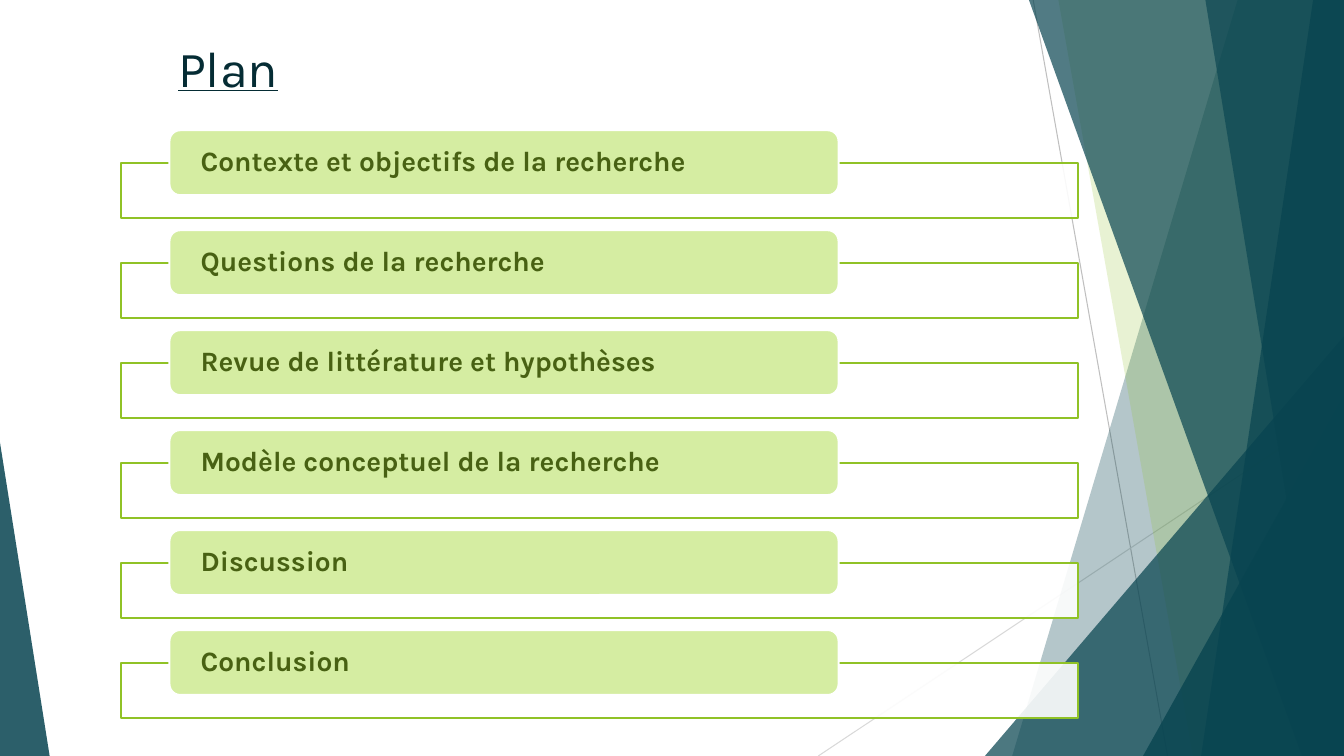
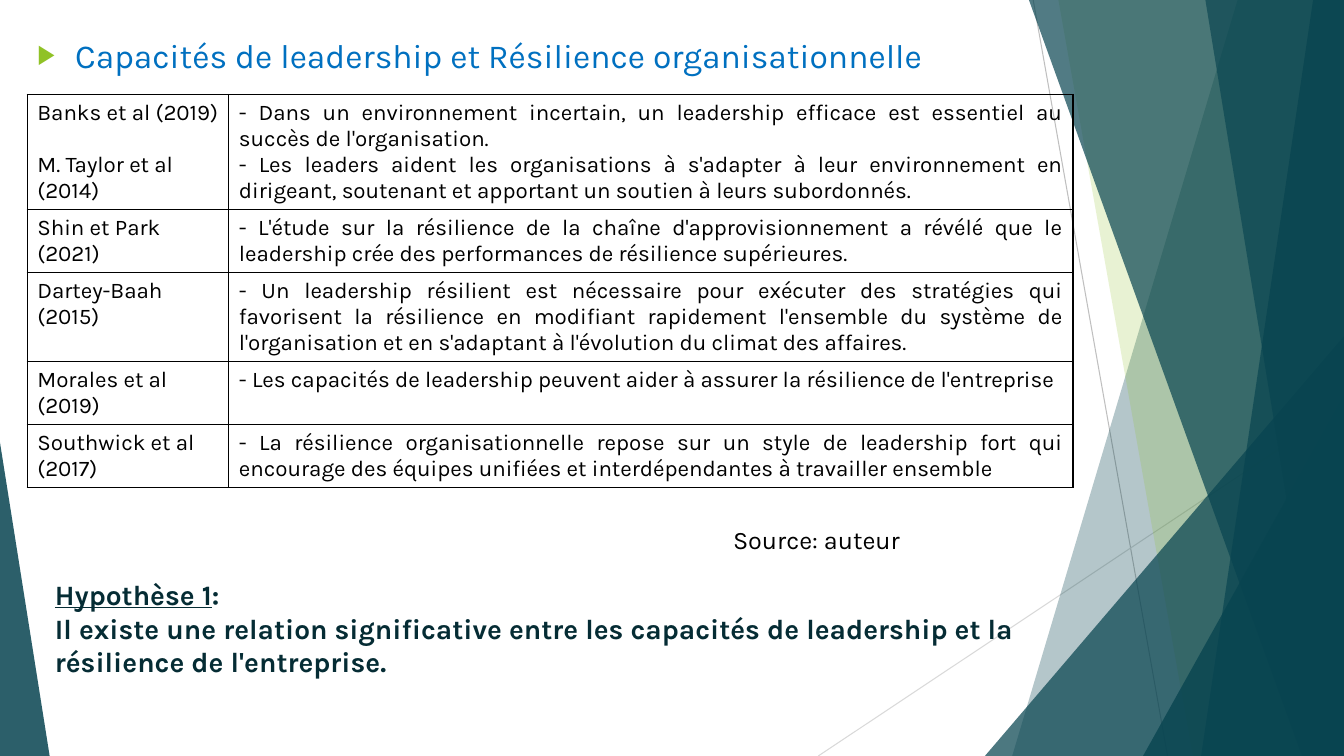
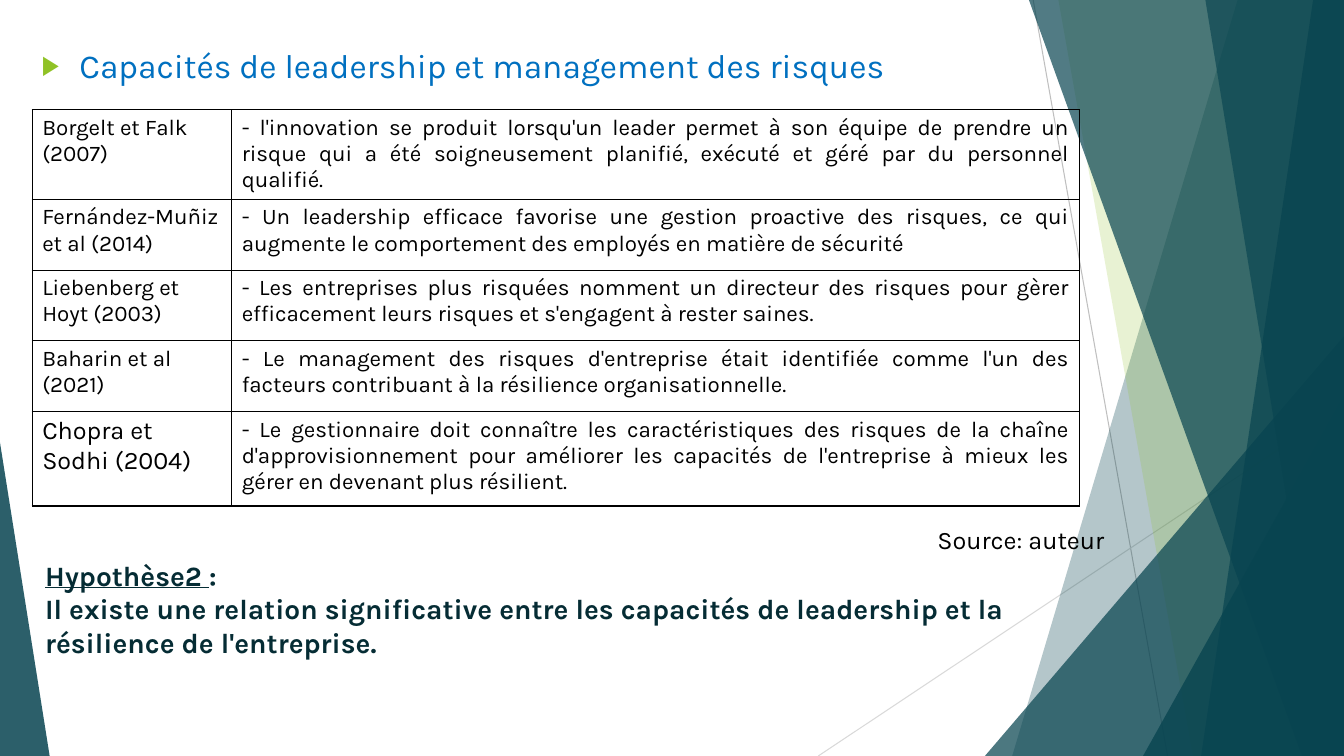
from lxml import etree
from pptx import Presentation
from pptx.dml.color import RGBColor
from pptx.enum import shapes, text
from pptx.oxml import ns
from pptx.util import Pt

FONT = "Karla"
WHITE = RGBColor(0xFF, 0xFF, 0xFF)
BLACK = RGBColor(0, 0, 0)
TEAL = RGBColor(0x08, 0x44, 0x50)
GREEN = RGBColor(0x90, 0xC2, 0x26)
PALE_GREEN = RGBColor(0xD5, 0xED, 0xA2)
DARK_GREEN = RGBColor(0x48, 0x61, 0x13)
NAVY = RGBColor(0x05, 0x2C, 0x34)
BLUE = RGBColor(0x00, 0x70, 0xC0)
GREY = RGBColor(0xBF, 0xBF, 0xBF)
LIGHT_GREY = RGBColor(0xD9, 0xD9, 0xD9)

WIDTH, HEIGHT = 960, 540

RULES = [(738, 0, 834, HEIGHT, GREY), (WIDTH, 290, 584.5, HEIGHT, LIGHT_GREY)]
BANDS = [
    ("panel", (884, 723), TEAL, 30),
    ("panel", (756, 852), GREEN, 20),
    ("triangle", (703.5, 240, 256.5, 1), TEAL, 72),
    ("panel", (735, 929.5), TEAL, 70),
    ("panel", (938, 858), TEAL, 70),
    ("panel", (861, 949), TEAL, 65),
    ("triangle", (816.5, 283, 143.5, 1), TEAL, 80),
    ("triangle", (0, 316, 35.5, 0), TEAL, 85),
]

PLAN = [
    "Contexte et objectifs de la recherche",
    "Questions de la recherche",
    "Revue de littérature et hypothèses",
    "Modèle conceptuel de la recherche",
    "Discussion",
    "Conclusion",
]
PLAN_TOP, PLAN_PITCH = 93, 71.4

HYPOTHESIS = ("Il existe une relation significative entre les capacités de "
              "leadership et la résilience de l'entreprise.")

REVIEWS = [
    {
        "heading": "Capacités de leadership et Résilience organisationnelle",
        "heading_box": (19.5, 21, 798, 42),
        "table_at": (19.5, 67.5),
        "columns": (144, 603),
        "rows": [
            (82, 16, ["Banks et al (2019)", "M. Taylor et al (2014)"],
             ["- Dans un environnement incertain, un leadership efficace est essentiel au succès de l'organisation.",
              "- Les leaders aident les organisations à s'adapter à leur environnement en dirigeant, soutenant et apportant un soutien à leurs subordonnés."]),
            (45, 16, ["Shin et Park (2021)"],
             ["- L'étude sur la résilience de la chaîne d'approvisionnement a révélé que le leadership crée des performances de résilience supérieures."]),
            (63.5, 16, ["Dartey-Baah (2015)"],
             ["- Un leadership résilient est nécessaire pour exécuter des stratégies qui favorisent la résilience en modifiant rapidement l'ensemble du système de l'organisation et en s'adaptant à l'évolution du climat des affaires."]),
            (45, 16, ["Morales et al (2019)"],
             ["- Les capacités de leadership peuvent aider à assurer la résilience de l'entreprise"]),
            (45, 16, ["Southwick et al (2017)"],
             ["- La résilience organisationnelle repose sur un style de leadership fort qui encourage des équipes unifiées et interdépendantes à travailler ensemble"]),
        ],
        "source_left": 516.5,
        "label": "Hypothèse 1",
        "title_box": (32, 409, 775.5, 79),
    },
    {
        "heading": "Capacités de leadership et management des risques",
        "heading_box": (22.5, 28.5, 865, 42),
        "table_at": (23, 78.5),
        "columns": (142.5, 605.5),
        "rows": [
            (64, 16, ["Borgelt et Falk (2007)"],
             ["- l'innovation se produit lorsqu'un leader permet à son équipe de prendre un risque qui a été soigneusement planifié, exécuté et géré par du personnel qualifié."]),
            (50.5, 16, ["Fernández-Muñiz et al (2014)"],
             ["- Un leadership efficace favorise une gestion proactive des risques, ce qui augmente le comportement des employés en matière de sécurité"]),
            (50.5, 16, ["Liebenberg et Hoyt (2003)"],
             ["- Les entreprises plus risquées nomment un directeur des risques pour gèrer efficacement leurs risques et s'engagent à rester saines."]),
            (50.5, 16, ["Baharin et al (2021)"],
             ["- Le management des risques d'entreprise était identifiée comme l'un des facteurs contribuant à la résilience organisationnelle."]),
            (67.5, 18, ["Chopra et Sodhi (2004)"],
             ["- Le gestionnaire doit connaître les caractéristiques des risques de la chaîne d'approvisionnement pour améliorer les capacités de l'entreprise à mieux les gérer en devenant plus résilient."]),
        ],
        "source_left": 662.5,
        "label": "Hypothèse2 ",
        "title_box": (25, 395, 780, 79),
    },
]


def points(*values):
    return [Pt(value) for value in values]


def add_run(paragraph, words, size, color, bold=False, underline=False):
    run = paragraph.add_run()
    run.text = words
    font = run.font
    font.name, font.size, font.bold, font.underline = FONT, Pt(size), bold, underline
    font.color.rgb = color


def paint(shape, color, opacity=100, line=None):
    shape.shadow.inherit = False
    shape.fill.solid()
    shape.fill.fore_color.rgb = color
    if opacity < 100:
        for node in shape.element.spPr.xpath("./a:solidFill/a:srgbClr"):
            etree.SubElement(node, ns.qn("a:alpha")).set("val", str(opacity * 1000))
    if line is None:
        shape.line.fill.background()
    else:
        shape.line.color.rgb = line
        shape.line.width = Pt(1.5)


def place(placeholder, box):
    placeholder.left, placeholder.top, placeholder.width, placeholder.height = points(*box)
    frame = placeholder.text_frame
    frame.auto_size = text.MSO_AUTO_SIZE.NONE
    frame.vertical_anchor = text.MSO_ANCHOR.TOP
    paragraph = frame.paragraphs[0]
    paragraph.alignment = text.PP_ALIGN.LEFT
    paragraph.space_before = Pt(0)
    return paragraph


def decorate_master(presentation, slide):
    parts = []
    for x1, y1, x2, y2, color in RULES:
        rule = slide.shapes.add_connector(
            shapes.MSO_CONNECTOR.STRAIGHT, *points(x1, y1, x2, y2))
        rule.line.color.rgb = color
        rule.line.width = Pt(0.75)
        etree.SubElement(rule.element.spPr, ns.qn("a:effectLst"))
        parts.append(rule)
    for kind, geometry, color, opacity in BANDS:
        if kind == "panel":
            top_x, bottom_x = geometry
            builder = slide.shapes.build_freeform(top_x, 0, scale=Pt(1))
            builder.add_line_segments([(WIDTH, 0), (WIDTH, HEIGHT), (bottom_x, HEIGHT)])
            band = builder.convert_to_shape()
        else:
            left, top, width, apex = geometry
            band = slide.shapes.add_shape(
                shapes.MSO_SHAPE.ISOSCELES_TRIANGLE, *points(left, top, width, HEIGHT - top))
            band.adjustments[0] = apex
        paint(band, color, opacity)
        parts.append(band)
    master_tree = presentation.slide_master.shapes.element
    for number, part in enumerate(parts, 100):
        part.element.xpath(".//p:cNvPr")[0].set("id", str(number))
        master_tree.append(part.element)


def build_plan(slide):
    add_run(place(slide.shapes.title, (120, 23, 570, 65.5)), "Plan", 36, NAVY, underline=True)
    for index, words in enumerate(PLAN):
        top = PLAN_TOP + index * PLAN_PITCH
        frame_box = slide.shapes.add_shape(
            shapes.MSO_SHAPE.RECTANGLE, *points(86.5, top + 23.5, 683.5, 39.5))
        paint(frame_box, WHITE, 90, GREEN)
        label = slide.shapes.add_shape(
            shapes.MSO_SHAPE.ROUNDED_RECTANGLE, *points(121, top, 478, 46.5))
        paint(label, PALE_GREEN, line=WHITE)
        frame = label.text_frame
        frame.word_wrap = True
        frame.vertical_anchor = text.MSO_ANCHOR.MIDDLE
        frame.margin_left = frame.margin_right = Pt(20)
        frame.margin_top = frame.margin_bottom = 0
        paragraph = frame.paragraphs[0]
        paragraph.alignment = text.PP_ALIGN.LEFT
        paragraph.line_spacing = 0.9
        add_run(paragraph, words, 20, DARK_GREEN, bold=True)


def add_bullet(paragraph):
    properties = paragraph._p.get_or_add_pPr()
    properties.set("marL", str(Pt(27)))
    properties.set("indent", str(-Pt(27)))
    color = etree.SubElement(properties, ns.qn("a:buClr"))
    etree.SubElement(color, ns.qn("a:srgbClr")).set("val", str(GREEN))
    for tag, name, value in (("a:buSzPct", "val", "80000"),
                             ("a:buFont", "typeface", "Arial"),
                             ("a:buChar", "char", "▶")):
        etree.SubElement(properties, ns.qn(tag)).set(name, value)


def fill_cell(cell, lines, size, alignment, gap):
    properties = cell._tc.get_or_add_tcPr()
    for side in ("a:lnL", "a:lnR", "a:lnT", "a:lnB"):
        border = etree.SubElement(properties, ns.qn(side), w=str(Pt(1)))
        solid = etree.SubElement(border, ns.qn("a:solidFill"))
        etree.SubElement(solid, ns.qn("a:srgbClr")).set("val", str(BLACK))
    cell.fill.background()
    for index, line in enumerate(lines):
        frame = cell.text_frame
        paragraph = frame.add_paragraph() if index else frame.paragraphs[0]
        paragraph.alignment = alignment
        paragraph.space_before = Pt(gap if index else 0)
        add_run(paragraph, line, size, BLACK)


def build_review(slide, review):
    heading = place(slide.placeholders[1], review["heading_box"])
    add_bullet(heading)
    add_run(heading, review["heading"], 24, BLUE)

    rows, columns = review["rows"], review["columns"]
    table = slide.shapes.add_table(
        len(rows), len(columns),
        *points(*review["table_at"], sum(columns), sum(row[0] for row in rows))).table
    table.first_row = table.horz_banding = False
    for column, width in zip(table.columns, columns):
        column.width = Pt(width)
    for index, (height, author_size, authors, findings) in enumerate(rows):
        table.rows[index].height = Pt(height)
        fill_cell(table.cell(index, 0), authors, author_size, text.PP_ALIGN.LEFT, 19)
        fill_cell(table.cell(index, 1), findings, 16, text.PP_ALIGN.JUSTIFY, 0)

    source = slide.shapes.add_textbox(*points(review["source_left"], 371, 140, 30))
    source.text_frame.word_wrap = True
    add_run(source.text_frame.paragraphs[0], "Source: auteur", 18, BLACK)

    title = place(slide.shapes.title, review["title_box"])
    add_run(title, review["label"], 20, NAVY, bold=True, underline=True)
    add_run(title, ":", 20, NAVY, bold=True)
    title.add_line_break()
    add_run(title, HYPOTHESIS, 20, NAVY, bold=True)


def main():
    presentation = Presentation()
    presentation.slide_width, presentation.slide_height = points(WIDTH, HEIGHT)
    layouts = presentation.slide_layouts
    plan_slide = presentation.slides.add_slide(layouts.get_by_name("Title Only"))
    decorate_master(presentation, plan_slide)
    build_plan(plan_slide)
    for review in REVIEWS:
        slide = presentation.slides.add_slide(layouts.get_by_name("Title and Content"))
        build_review(slide, review)
    presentation.save("out.pptx")


if __name__ == "__main__":
    main()
